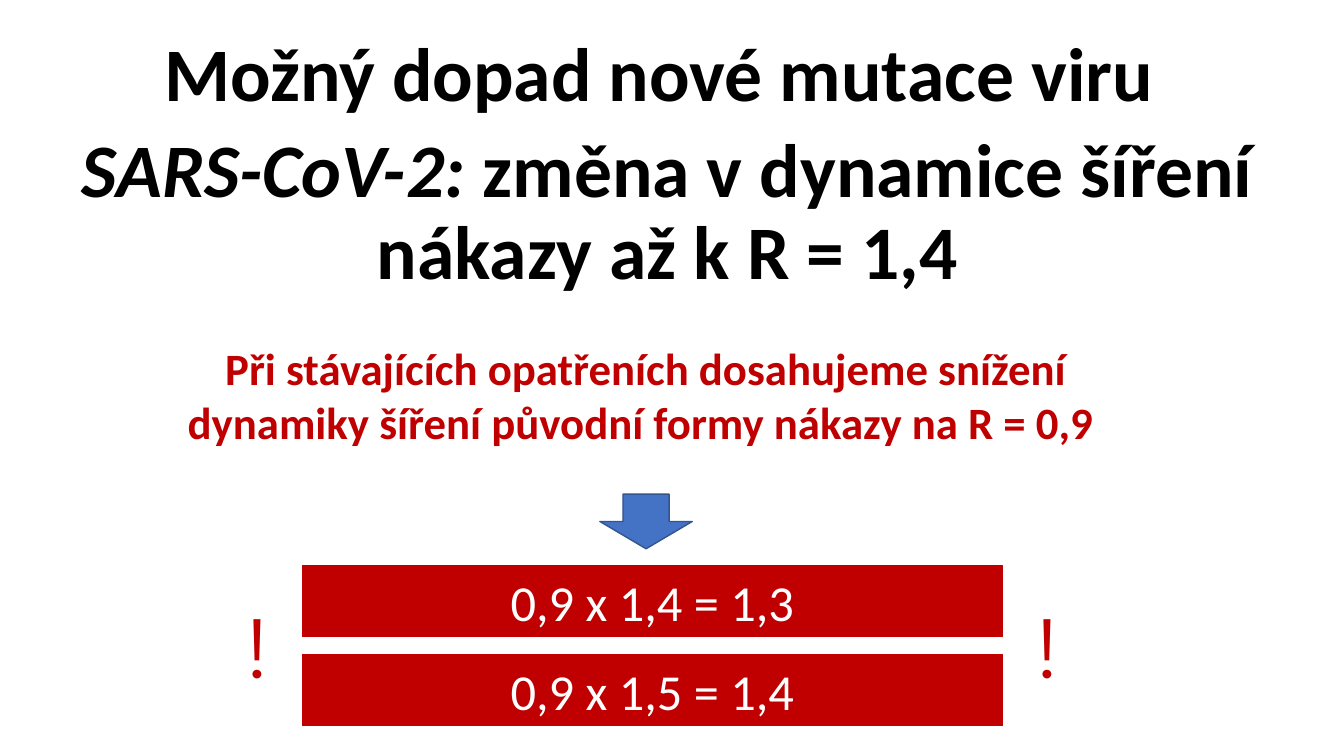
from pptx import Presentation
from pptx.dml.color import RGBColor
from pptx.enum.shapes import MSO_SHAPE
from pptx.enum.text import MSO_ANCHOR, PP_ALIGN
from pptx.util import Pt

RED = RGBColor(0xC0, 0x00, 0x00)
BLUE = RGBColor(0x44, 0x72, 0xC4)
NAVY = RGBColor(0x32, 0x54, 0x91)
BLACK = RGBColor(0x00, 0x00, 0x00)
WHITE = RGBColor(0xFF, 0xFF, 0xFF)


def add_run(para, text, size, color, font="Calibri", bold=False, italic=False):
    run = para.add_run()
    run.text = text
    run.font.name = font
    run.font.size = Pt(size)
    run.font.bold = bold
    run.font.italic = italic
    run.font.color.rgb = color


def add_box(slide, left, top, width, height):
    box = slide.shapes.add_textbox(Pt(left), Pt(top), Pt(width), Pt(height))
    box.text_frame.word_wrap = True
    box.text_frame.paragraphs[0].alignment = PP_ALIGN.CENTER
    return box.text_frame


def add_form(slide, kind, left, top, width, height, fill, line, weight):
    form = slide.shapes.add_shape(kind, Pt(left), Pt(top), Pt(width), Pt(height))
    form.shadow.inherit = False
    form.fill.solid()
    form.fill.fore_color.rgb = fill
    form.line.color.rgb = line
    form.line.width = Pt(weight)
    return form


def add_bar(slide, top, text):
    bar = add_form(slide, MSO_SHAPE.RECTANGLE, 216, top, 500, 51, RED, RED, 0.75)
    frame = bar.text_frame
    frame.word_wrap = True
    frame.vertical_anchor = MSO_ANCHOR.MIDDLE
    para = frame.paragraphs[0]
    para.alignment = PP_ALIGN.CENTER
    add_run(para, text, 36, WHITE)


def add_title(slide):
    frame = add_box(slide, 30, 22.5, 893.5, 211.5)
    lines = [
        [("Možný dopad nové mutace viru ", False)],
        [("SARS-CoV-2: ", True),
         ("změna v dynamice šíření nákazy až k R = 1,4", False)],
    ]
    for i, runs in enumerate(lines):
        para = frame.add_paragraph() if i else frame.paragraphs[0]
        para.alignment = PP_ALIGN.CENTER
        para.line_spacing = 0.9
        para.space_before = Pt(10)
        for text, italic in runs:
            add_run(para, text, 54, BLACK, bold=True, italic=italic)


def main():
    deck = Presentation()
    deck.slide_width, deck.slide_height = Pt(960), Pt(540)
    slide = deck.slides.add_slide(deck.slide_layouts[6])

    # Heading and current state
    add_title(slide)
    state = add_box(slide, 121.5, 240, 680, 85)
    add_run(state.paragraphs[0],
            "Při stávajících opatřeních dosahujeme snížení dynamiky šíření "
            "původní formy nákazy na R = 0,9 ", 32, RED, bold=True)

    # Arrow to the outcome
    add_form(slide, MSO_SHAPE.DOWN_ARROW, 428.5, 353, 66, 39, BLUE, NAVY, 1)

    # Resulting numbers
    for i, text in enumerate(["0,9 x 1,4 = 1,3", "0,9 x 1,5 = 1,4"]):
        add_bar(slide, 404 + i * 63.5, text)

    # Warning marks on both sides
    for left in (152, 716):
        mark = add_box(slide, left, 421, 64, 80)
        add_run(mark.paragraphs[0], "!", 60, RED, font="Montserrat")

    deck.save("out.pptx")


if __name__ == "__main__":
    main()
